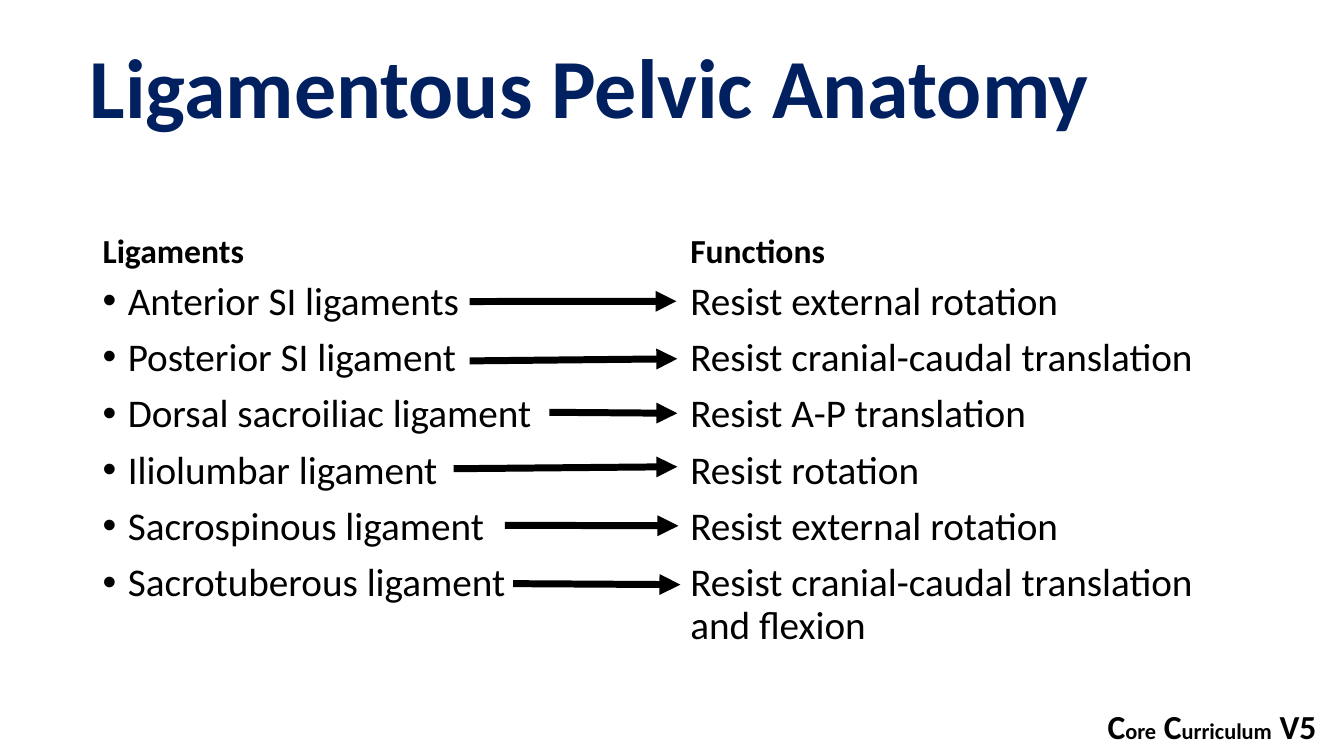
from dataclasses import dataclass

from pptx import Presentation
from pptx.dml.color import RGBColor
from pptx.enum.shapes import MSO_CONNECTOR
from pptx.enum.text import MSO_ANCHOR as Anchor, MSO_AUTO_SIZE as AutoSize, PP_ALIGN as Align
from pptx.oxml.ns import qn
from pptx.oxml.xmlchemy import OxmlElement
from pptx.util import Pt


@dataclass(frozen=True)
class Theme:
    font: str = "Calibri"
    ink: RGBColor = RGBColor(0x00, 0x00, 0x00)
    navy: RGBColor = RGBColor(0x00, 0x20, 0x60)
    title: int = 60
    heading: int = 24
    body: int = 28
    small: int = 16


theme = Theme()


def style(font, size, color=theme.ink, bold=False):
    font.name, font.size, font.bold = theme.font, Pt(size), bold
    font.color.rgb = color


def add_text(left, top, width, height, lines, size, bold=False, anchor=Anchor.TOP, bullet=False):
    box = page.shapes.add_textbox(Pt(left), Pt(top), Pt(width), Pt(height))
    frame = box.text_frame
    frame.word_wrap = True
    frame.vertical_anchor = anchor
    frame.text = "\n".join(lines)
    for index, para in enumerate(frame.paragraphs):
        para.line_spacing = 0.9
        if index:
            para.space_before = Pt(10)
        if bullet:
            props = para._p.get_or_add_pPr()
            props.set("marL", str(Pt(18)))
            props.set("indent", str(Pt(-18)))
            bullet_font = OxmlElement("a:buFont")
            bullet_font.set("typeface", "Arial")
            mark = OxmlElement("a:buChar")
            mark.set("char", "•")
            props.extend([bullet_font, mark])
        for span in para.runs:
            style(span.font, size, bold=bold)


deck = Presentation()
deck.slide_width, deck.slide_height = Pt(960), Pt(540)
page = deck.slides.add_slide(deck.slide_layouts[5])

# Title
title = page.shapes.title
title.left, title.top, title.width, title.height = Pt(57), Pt(-0.7), Pt(828), Pt(131.8)
title.text_frame.text = "Ligamentous Pelvic Anatomy"
title.text_frame.auto_size = AutoSize.NONE
title.text_frame.vertical_anchor = Anchor.MIDDLE
para = title.text_frame.paragraphs[0]
para.alignment = Align.LEFT
para.line_spacing = 0.9
style(para.runs[0].font, theme.title, theme.navy, bold=True)

# Ligament, function, and the start and end of the arrow between them
rows = [
    ("Anterior SI ligaments", "Resist external rotation", (335.5, 215.4), (483.2, 215.2)),
    ("Posterior SI ligament", "Resist cranial-caudal translation", (335.5, 257.8), (483.8, 256.3)),
    ("Dorsal sacroiliac ligament", "Resist A-P translation", (392.4, 294.5), (483.8, 295.2)),
    ("Iliolumbar ligament", "Resist rotation", (324, 334.8), (483.8, 333.4)),
    ("Sacrospinous ligament", "Resist external rotation", (360.7, 375.2), (484.6, 375.6)),
    ("Sacrotuberous ligament", "Resist cranial-caudal translation and flexion",
     (366.5, 416.9), (486, 417.6)),
]
ligaments, functions, starts, ends = zip(*rows)

# Two columns, each with a heading
columns = [
    (66.2, 406, "Ligaments", ligaments, True),
    (486, 408, "Functions", functions, False),
]
for left, width, heading, lines, bullet in columns:
    add_text(left, 132.5, width, 64.8, [heading], theme.heading, bold=True, anchor=Anchor.BOTTOM)
    add_text(left, 197.3, width, 290, lines, theme.body, bullet=bullet)

# Arrows from ligament to function
for start, end in zip(starts, ends):
    arrow = page.shapes.add_connector(MSO_CONNECTOR.STRAIGHT, *map(Pt, start + end))
    arrow.line.color.rgb = theme.ink
    arrow.line.width = Pt(5)
    properties = arrow._element.spPr
    tip = OxmlElement("a:tailEnd")
    tip.set("type", "triangle")
    properties.find(qn("a:ln")).append(tip)
    properties.append(OxmlElement("a:effectLst"))

# Footer in mixed sizes
footer = page.shapes.add_textbox(Pt(784), Pt(501), Pt(170), Pt(36))
footer.text_frame.word_wrap = True
para = footer.text_frame.paragraphs[0]
for text, size in [("C", theme.heading), ("ore", theme.small), (" C", theme.heading),
                   ("urriculum", theme.small), (" V5", theme.heading)]:
    span = para.add_run()
    span.text = text
    style(span.font, size, bold=True)

deck.save("out.pptx")
